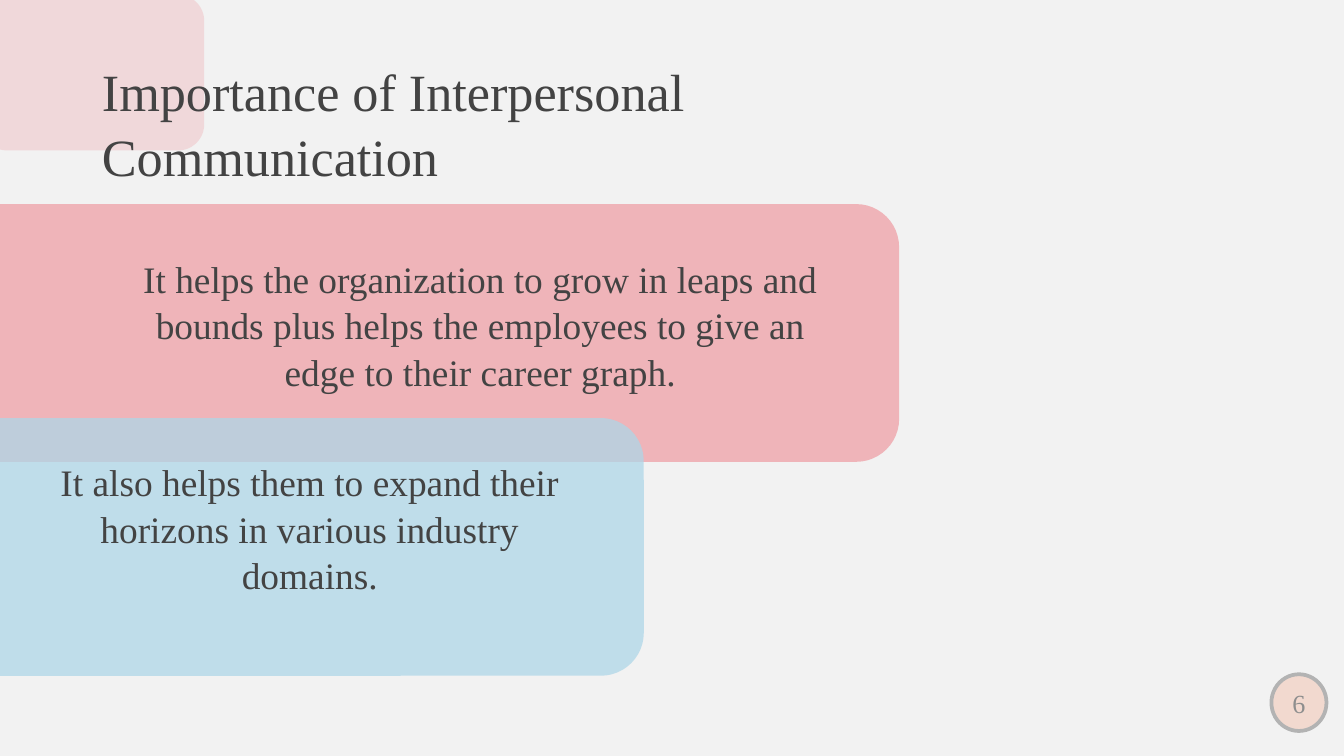
from pptx import Presentation
from pptx.dml.color import RGBColor
from pptx.enum.shapes import MSO_SHAPE as Form
from pptx.enum.text import MSO_ANCHOR as Anchor, PP_ALIGN as Align
from pptx.oxml.ns import qn
from pptx.util import Inches, Pt

WIDE = Inches(10)
HIGH = WIDE * 9 // 16
FONT = "Times New Roman"
INK = "434343"
PINK = "EE8C94"
BLUE = "AED7E8"


def paint(fill, hue, alpha=100):
    """Fill with a solid hex colour at a percentage of opacity."""
    fill.solid()
    fill.fore_color.rgb = RGBColor.from_string(hue)
    if alpha < 100:
        tint = fill._xPr.find(qn("a:solidFill"))[0]
        tint.makeelement(qn("a:alpha"), {})
        node = tint.makeelement(qn("a:alpha"), {"val": str(alpha * 1000)})
        tint.append(node)


def place(x, y, w, h):
    """Turn percentages of the slide's width and height into lengths."""
    return [int(part * side / 100)
            for part, side in zip((x, y, w, h), (WIDE, HIGH) * 2)]


def write(frame, words, size, hue=INK, align=Align.CENTER, pad=0.1, lead=1.04):
    """Write one run of text in a vertically centred frame."""
    frame.word_wrap = True
    frame.vertical_anchor = Anchor.MIDDLE
    frame.margin_left = frame.margin_right = Inches(pad)
    frame.margin_top = frame.margin_bottom = Inches(pad)
    para = frame.paragraphs[0]
    para.alignment = align
    para.line_spacing = lead
    run = para.add_run()
    run.text = words
    run.font.name = FONT
    run.font.size = Pt(size)
    run.font.color.rgb = RGBColor.from_string(hue)


def panel(slide, area, hue, alpha):
    """Add a translucent rounded panel."""
    shape = slide.shapes.add_shape(Form.ROUNDED_RECTANGLE, *place(*area))
    shape.shadow.inherit = False
    shape.line.fill.background()
    paint(shape.fill, hue, alpha)


def label(slide, area, words, size, align=Align.CENTER):
    """Add a text box."""
    box = slide.shapes.add_textbox(*place(*area))
    write(box.text_frame, words, size, align=align)


def badge(slide, area, words):
    """Add the round page number."""
    disc = slide.shapes.add_shape(Form.OVAL, *place(*area))
    disc.shadow.inherit = False
    paint(disc.fill, "F2D9CF")
    paint(disc.line.fill, "B3B3B3")
    disc.line.width = Pt(2)
    write(disc.text_frame, words, 14, "8E8E8E", pad=0, lead=1)


def main():
    """Build and save the slide."""
    deck = Presentation()
    deck.slide_width, deck.slide_height = WIDE, HIGH
    slide = deck.slides.add_slide(deck.slide_layouts[6])
    paint(slide.background.fill, "F2F2F2")
    panel(slide, (-1.4, -0.7, 16.6, 20.6), PINK, 25)
    label(slide, (6.6, 5.2, 56.8, 21.9),
          "Importance of Interpersonal Communication", 28, Align.LEFT)
    panel(slide, (-8, 27, 74.9, 34.1), PINK, 60)
    panel(slide, (-8, 55.3, 55.9, 34.1), BLUE, 74)
    label(slide, (9.1, 30.4, 53.3, 24.9),
          "It helps the organization to grow in leaps and bounds plus helps "
          "the employees to give an edge to their career graph.", 20)
    label(slide, (2, 59.7, 42.1, 20.1),
          "It also helps them to expand their horizons in various industry "
          "domains.", 20)
    badge(slide, (94.6, 89.2, 4.1, 7.5), "6")
    deck.save("out.pptx")


if __name__ == "__main__":
    main()
